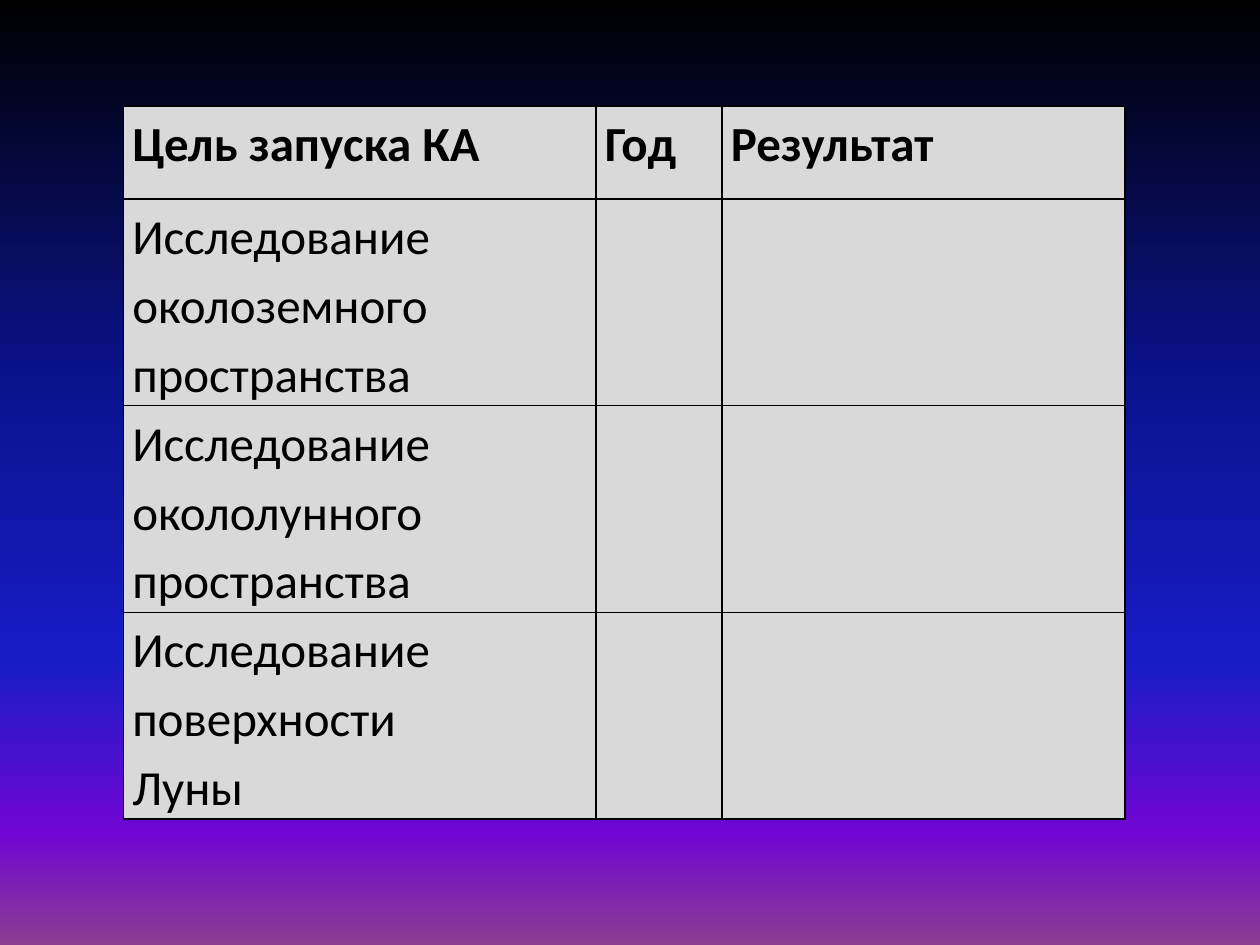
from dataclasses import dataclass

from lxml import etree
from pptx import Presentation
from pptx.dml.color import RGBColor
from pptx.oxml.ns import qn
from pptx.util import Inches, Pt

BLANK_LAYOUT = 6


@dataclass(frozen=True)
class Theme:
    font: str = "Calibri"
    size: int = 28
    line_spacing: float = 1.15
    text: str = "000000"
    border: str = "000000"
    border_width: int = 1
    cell: str = "D9D9D9"
    sky: tuple = (
        (0, "000000"),
        (40, "0A128C"),
        (70, "181CC7"),
        (88, "7005D4"),
        (100, "8C3D91"),
    )


THEME = Theme()
HEADER = ("Цель запуска КА", "Год", "Результат")
GOALS = (
    "Исследование околоземного\nпространства",
    "Исследование окололунного\nпространства",
    "Исследование поверхности\nЛуны",
)
COLUMN_WIDTHS = (3.75, 1, 3.2)
HEADER_HEIGHT = 0.74


def add_color(parent, color):
    etree.SubElement(parent, qn("a:srgbClr"), val=color)


def paint_background(page):
    fill = page.background.fill
    fill.gradient()
    fill.gradient_angle = 270
    stops = page.element.find(".//" + qn("a:gsLst"))
    for stop in list(stops):
        stops.remove(stop)
    for percent, color in THEME.sky:
        stop = etree.SubElement(stops, qn("a:gs"), pos=str(percent * 1000))
        add_color(stop, color)


def add_borders(cell):
    properties = cell._tc.get_or_add_tcPr()
    for index, side in enumerate(("a:lnL", "a:lnR", "a:lnT", "a:lnB")):
        line = etree.Element(qn(side), w=str(Pt(THEME.border_width)))
        add_color(etree.SubElement(line, qn("a:solidFill")), THEME.border)
        properties.insert(index, line)


def format_cell(cell, text, bold):
    cell.fill.solid()
    cell.fill.fore_color.rgb = RGBColor.from_string(THEME.cell)
    cell.margin_left = cell.margin_right = Inches(0.07)
    cell.margin_top = cell.margin_bottom = 0
    add_borders(cell)
    cell.text = text
    for para in cell.text_frame.paragraphs:
        para.line_spacing = THEME.line_spacing
        para.font.name = THEME.font
        para.font.size = Pt(THEME.size)
        para.font.bold = bold
        para.font.color.rgb = RGBColor.from_string(THEME.text)


def add_goals_table(page, left, top, width, height):
    rows = [HEADER] + [(goal, "", "") for goal in GOALS]
    table = page.shapes.add_table(
        len(rows), len(HEADER), Inches(left), Inches(top), Inches(width), Inches(height)
    ).table
    table.first_row = False
    table.horz_banding = False
    scale = width / sum(COLUMN_WIDTHS)
    for column, column_width in zip(table.columns, COLUMN_WIDTHS):
        column.width = Inches(column_width * scale)
    goal_height = (height - HEADER_HEIGHT) / len(GOALS)
    for index, values in enumerate(rows):
        is_header = index == 0
        table.rows[index].height = Inches(HEADER_HEIGHT if is_header else goal_height)
        for cell, text in zip(table.rows[index].cells, values):
            format_cell(cell, text, is_header)


def main():
    deck = Presentation()
    deck.slide_width = Inches(10)
    deck.slide_height = Inches(7.5)
    page = deck.slides.add_slide(deck.slide_layouts[BLANK_LAYOUT])
    paint_background(page)
    add_goals_table(page, 0.98, 0.84, 7.95, 5.66)
    deck.save("out.pptx")


if __name__ == "__main__":
    main()
